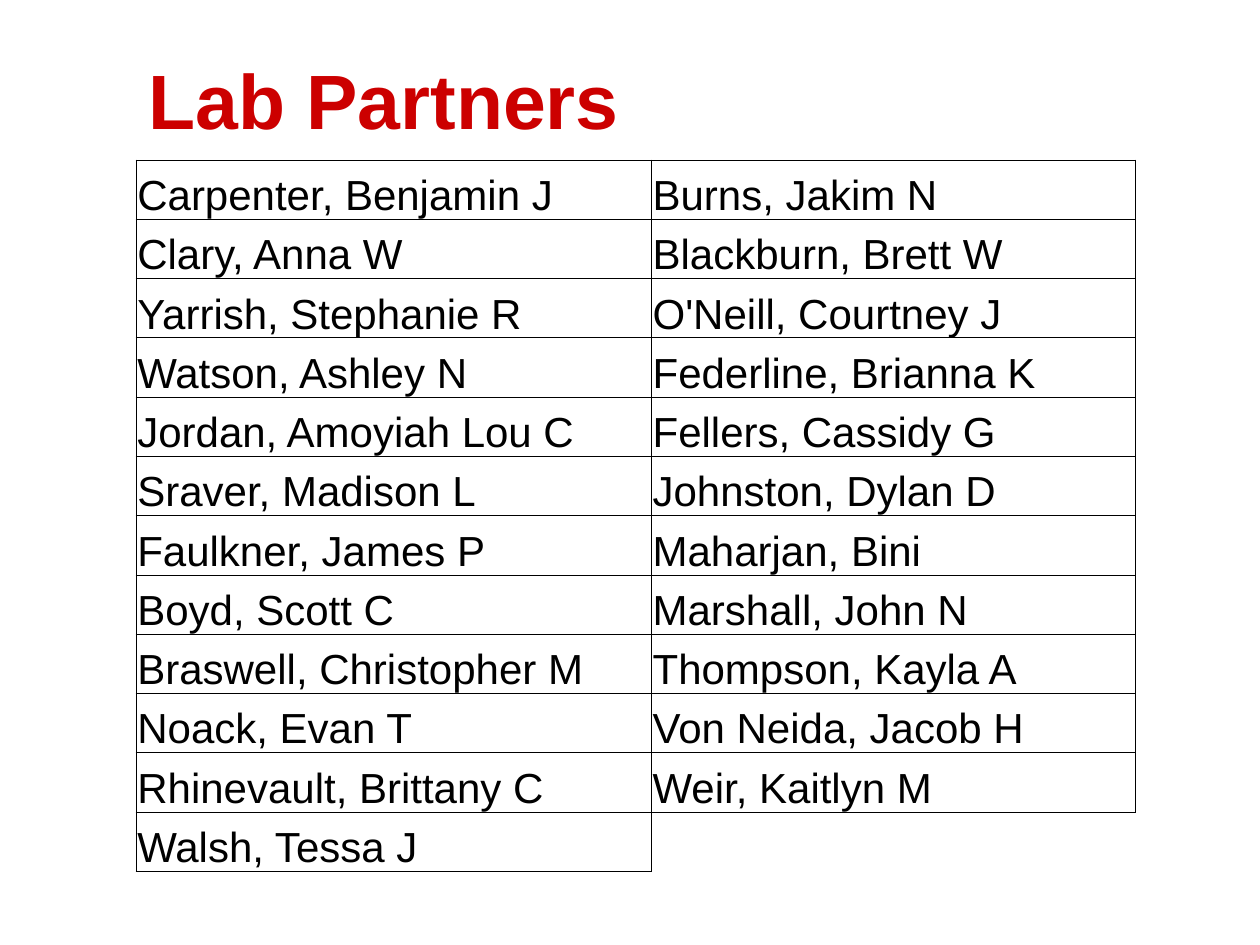
import pptx
import pptx.util
import pptx.dml.color
import pptx.enum.text
import pptx.oxml.ns
from lxml import etree

TITLE = "Lab Partners"
PARTNERS = [
    ("Carpenter, Benjamin J", "Burns, Jakim N"),
    ("Clary, Anna W", "Blackburn, Brett W"),
    ("Yarrish, Stephanie R", "O'Neill, Courtney J"),
    ("Watson, Ashley N", "Federline, Brianna K"),
    ("Jordan, Amoyiah Lou C", "Fellers, Cassidy G"),
    ("Sraver, Madison L", "Johnston, Dylan D"),
    ("Faulkner, James P", "Maharjan, Bini"),
    ("Boyd, Scott C", "Marshall, John N"),
    ("Braswell, Christopher M", "Thompson, Kayla A"),
    ("Noack, Evan T", "Von Neida, Jacob H"),
    ("Rhinevault, Brittany C", "Weir, Kaitlyn M"),
    ("Walsh, Tessa J", ""),
]
RED, BLACK, WHITE = "CC0000", "000000", "FFFFFF"
LEFT, TABLE_TOP, TABLE_HEIGHT = 1.08, 1.27, 5.65
COLUMN_WIDTHS = (4.09, 3.84)

inch = pptx.util.Inches
qn = pptx.oxml.ns.qn


def rgb(color):
    return pptx.dml.color.RGBColor.from_string(color)


def style_font(font, size, color, bold=False):
    font.name = "Arial"
    font.size = pptx.util.Pt(size)
    font.bold = bold
    font.color.rgb = rgb(color)


def set_borders(cell, visible):
    properties = cell._tc.get_or_add_tcPr()
    for side in "LRTB":
        line = etree.SubElement(properties, qn(f"a:ln{side}"), w=str(pptx.util.Pt(0.5)))
        if side in visible:
            fill = etree.SubElement(line, qn("a:solidFill"))
            etree.SubElement(fill, qn("a:srgbClr"), val=BLACK)
        else:
            etree.SubElement(line, qn("a:noFill"))


deck = pptx.Presentation()
deck.slide_width, deck.slide_height = inch(10), inch(7.5)
slide = deck.slides.add_slide(deck.slide_layouts[6])

# Title
title = slide.shapes.add_textbox(inch(LEFT), inch(0.3), inch(8.67), inch(1.25)).text_frame
title.word_wrap = True
title.margin_top = inch(0.12)
title.text = TITLE
style_font(title.paragraphs[0].runs[0].font, 44, RED, bold=True)

# Table of partners
table = slide.shapes.add_table(
    len(PARTNERS), len(COLUMN_WIDTHS), inch(LEFT), inch(TABLE_TOP),
    inch(sum(COLUMN_WIDTHS)), inch(TABLE_HEIGHT)).table
table.first_row = table.horz_banding = False
for column, width in zip(table.columns, COLUMN_WIDTHS):
    column.width = inch(width)

for row, names in enumerate(PARTNERS):
    table.rows[row].height = inch(TABLE_HEIGHT / len(PARTNERS))
    for col, name in enumerate(names):
        cell = table.cell(row, col)
        # The empty cell keeps only the edges it shares with its neighbours
        set_borders(cell, "LRTB" if name else "LT")
        if not name:
            cell.fill.background()
            continue
        cell.fill.solid()
        cell.fill.fore_color.rgb = rgb(WHITE)
        cell.margin_left = cell.margin_right = cell.margin_top = inch(0.01)
        cell.margin_bottom = 0
        cell.vertical_anchor = pptx.enum.text.MSO_ANCHOR.BOTTOM
        cell.text_frame.text = name
        style_font(cell.text_frame.paragraphs[0].runs[0].font, 24, BLACK)

deck.save("out.pptx")
